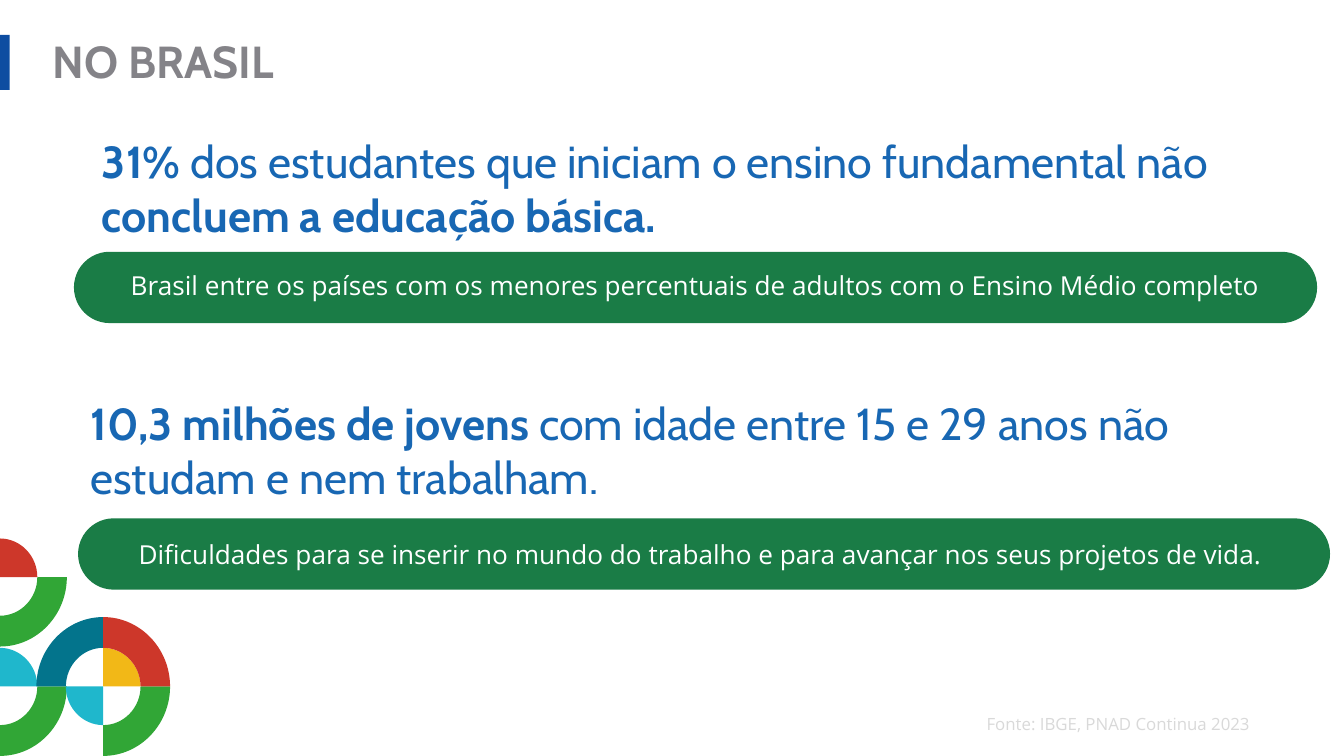
from lxml import etree
from pptx import Presentation
from pptx.dml.color import RGBColor
from pptx.enum.shapes import MSO_SHAPE as SHAPE
from pptx.enum.text import MSO_ANCHOR as ANCHOR, MSO_AUTO_SIZE as FIT, PP_ALIGN as ALIGN
from pptx.oxml.ns import qn
from pptx.util import Pt

COLORS = {
    "title": "848388", "bar": "0D4DA1", "statement": "1867B3", "pill": "1A7C46",
    "white": "FFFFFF", "source": "D9D9D9", "green": "31A636", "red": "CD372A",
    "cyan": "1FB7CC", "teal": "03748C", "yellow": "F2B817",
}
HEAD, BODY = "Cabin", "Open Sans"
INSET = (7.2, 3.6, 7.2, 3.6)
OUTER, INNER = (35.8, 37.2), (20, 20.7)  # ring radii, across and down
ROUND = 0.55  # handle length of a quarter arc, as a share of its radius


def paint(sp, color):
    sp.shadow.inherit = False
    sp.fill.solid()
    sp.fill.fore_color.rgb = RGBColor.from_string(COLORS[color])
    sp.line.fill.background()


def write(sp, *parts, font=BODY, size=14, color="white", align=ALIGN.LEFT,
          anchor=ANCHOR.TOP, inset=INSET):
    """Fill one paragraph with (text, bold) parts."""
    tf = sp.text_frame
    tf.word_wrap, tf.auto_size, tf.vertical_anchor = True, FIT.NONE, anchor
    tf.margin_left, tf.margin_top, tf.margin_right, tf.margin_bottom = map(Pt, inset)
    p = tf.paragraphs[0]
    p.alignment = align
    for text, bold in parts:
        r = p.add_run()
        r.text = text
        r.font.name, r.font.size, r.font.bold = font, Pt(size), bold
        r.font.color.rgb = RGBColor.from_string(COLORS[color])


def add_text(s, box, *parts, **fmt):
    write(s.shapes.add_textbox(*map(Pt, box)), *parts, **fmt)


def add_heading(s, box, text):
    """Title with the blue bar at the slide edge."""
    sp = s.shapes.title
    sp.left, sp.top, sp.width, sp.height = map(Pt, box)
    write(sp, (text, True), font=HEAD, size=24, color="title")
    bar = s.shapes.add_shape(SHAPE.RECTANGLE, 0, Pt(box[1] + 4.3), Pt(5.2), Pt(29.5))
    paint(bar, "bar")


def add_pill(s, box, text, inset):
    sp = s.shapes.add_shape(SHAPE.ROUNDED_RECTANGLE, *map(Pt, box))
    sp.adjustments[0] = 0.5
    paint(sp, "pill")
    write(sp, (text, False), align=ALIGN.CENTER, anchor=ANCHOR.MIDDLE, inset=inset)


def bend(line, start, end, center):
    """Turn a straight segment into a quarter arc around the center."""
    first = [a + ROUND * (b - c) for a, b, c in zip(start, end, center)]
    second = [b + ROUND * (a - c) for a, b, c in zip(start, end, center)]
    line.tag = qn("a:cubicBezTo")
    for i, (x, y) in enumerate((first, second)):
        pt = etree.Element(qn("a:pt"), x=str(round(x)), y=str(round(y)))
        line.insert(i, pt)


def add_quarter(s, cx, cy, quadrant, color, ring):
    """Quarter ring or disc; quadrants run clockwise from lower right."""
    axes = ((1, 0), (0, 1), (-1, 0), (0, -1))
    turns = axes[quadrant], axes[(quadrant + 1) % 4]

    def ends(radii):
        return [(Pt(cx + radii[0] * dx), Pt(cy + radii[1] * dy)) for dx, dy in turns]

    inner = ends(INNER)
    points = ends(OUTER) + inner[::-1] if ring else inner + [(Pt(cx), Pt(cy))]
    builder = s.shapes.build_freeform(*points[0], scale=1.0)
    builder.add_line_segments(points[1:], close=True)
    sp = builder.convert_to_shape()
    paint(sp, color)

    # Every other side is an arc
    local = [(x - sp.left, y - sp.top) for x, y in points]
    center = Pt(cx) - sp.left, Pt(cy) - sp.top
    lines = list(sp._element.iter(qn("a:lnTo")))
    for i in range(0, len(points) - 1, 2):
        bend(lines[i], local[i], local[i + 1], center)


def add_ornament(s, box):
    """Quarter rings and discs around three centres in the corner."""
    x, y, w, h = box
    upper, lower, right = y + INNER[1], y + h - OUTER[1], x + w - OUTER[0]
    for cx, cy, quadrant, color, ring in (
        (x, upper, 0, "green", True),
        (x, upper, 3, "red", False),
        (x, lower, 0, "green", True),
        (x, lower, 3, "cyan", False),
        (right, lower, 0, "green", True),
        (right, lower, 2, "teal", True),
        (right, lower, 1, "cyan", False),
        (right, lower, 3, "yellow", False),
        (right, lower, 3, "red", True),
    ):
        add_quarter(s, cx, cy, quadrant, color, ring)


def main():
    prs = Presentation()
    prs.slide_width, prs.slide_height = Pt(720), Pt(405)
    s = prs.slides.add_slide(prs.slide_layouts[5])

    # Heading
    add_heading(s, (21, 14.4, 432, 36), "NO BRASIL")

    # School completion
    statement = dict(font=HEAD, size=24, color="statement")
    add_text(s, (47.5, 68.1, 650, 65.5),
             ("31% ", True),
             ("dos estudantes que iniciam o ensino fundamental não ", False),
             ("concluem a educação básica.", True), **statement)
    add_pill(s, (39.6, 134.9, 666, 38.2),
             "Brasil entre os países com os menores percentuais de adultos "
             "com o Ensino Médio completo", (7.2, 3.6, 7.2, 5.6))

    # Young people out of school and work
    add_text(s, (48.5, 212.1, 656.6, 58.3),
             ("10,3 milhões de jovens ", True),
             ("com idade entre 15 e 29 anos não estudam e nem trabalham.", False),
             inset=(0, 0, 0, 0), **statement)
    add_pill(s, (41.8, 277.7, 670.7, 38.2),
             "Dificuldades para se inserir no mundo do trabalho e para avançar "
             "nos seus projetos de vida.", (7.2, 3.6, 10.8, 3.6))

    # Source and corner ornament
    add_text(s, (528.5, 382.3, 151.9, 10.8), ("Fonte: IBGE, PNAD Continua 2023", False),
             size=9, color="source", inset=(0, 0, 0, 0))
    add_ornament(s, (0, 288.5, 91.1, 116.5))

    prs.save("out.pptx")


if __name__ == "__main__":
    main()
